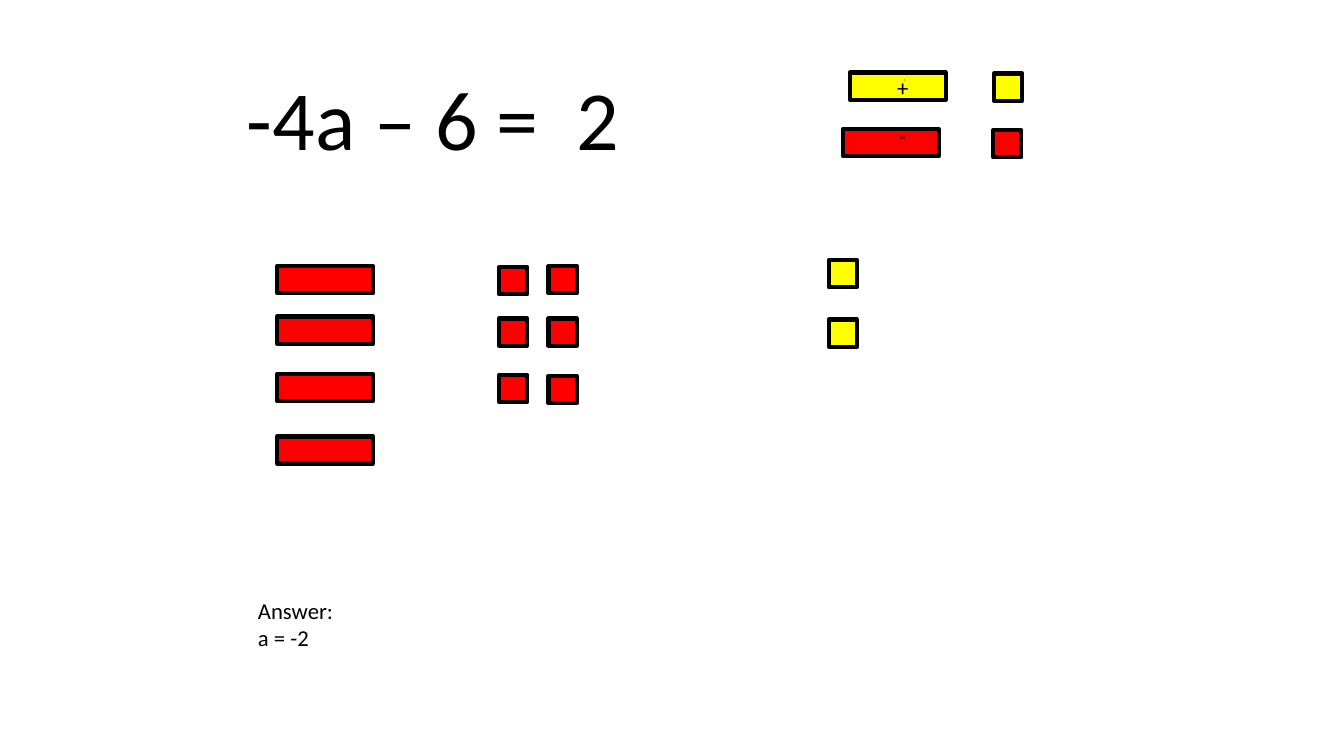
import pptx
import pptx.dml.color
import pptx.enum.shapes
import pptx.enum.text
import pptx.util

PX = 9144  # EMU per px, 100 px to the inch
BAR, UNIT = (95, 27), (28, 27)
RED, YELLOW, BLACK = "FF0000", "FFFF00", "000000"


def color(value):
    return pptx.dml.color.RGBColor.from_string(value)


def emu(*lengths):
    return [length * PX for length in lengths]


def add_tile(slide, left, top, size, fill):
    tile = slide.shapes.add_shape(
        pptx.enum.shapes.MSO_SHAPE.RECTANGLE, *emu(left, top, *size))
    tile.shadow.inherit = False
    tile.fill.solid()
    tile.fill.fore_color.rgb = color(fill)
    tile.line.color.rgb = color(BLACK)
    tile.line.width = pptx.util.Pt(3)


def add_text(slide, box, lines, size=16.2, font="Calibri", wrap=True,
             anchor=pptx.enum.text.MSO_ANCHOR.TOP, spacing=1.0):
    frame = slide.shapes.add_textbox(*emu(*box)).text_frame
    frame.word_wrap = wrap
    frame.vertical_anchor = anchor
    frame.text = "\n".join(lines)
    style = {"size": pptx.util.Pt(size), "name": font}
    for paragraph in frame.paragraphs:
        paragraph.line_spacing = spacing
        for run in paragraph.runs:
            for name, value in style.items():
                setattr(run.font, name, value)
            run.font.color.rgb = color(BLACK)


def add_key(slide, left, top):
    """Legend: the positive and negative variable bars and units."""
    tiny = {"size": 1.8, "font": "Times New Roman"}
    add_tile(slide, left, top + 56, BAR, RED)
    add_text(slide, (left + 46, top + 57, 28, 13), ["X"], **tiny)
    add_tile(slide, left + 7, top, BAR, YELLOW)
    add_text(slide, (left + 52, top + 1, 18, 13), ["X"], **tiny)
    add_tile(slide, left + 150, top + 1, UNIT, YELLOW)
    add_tile(slide, left + 149, top + 57, UNIT, RED)
    add_text(slide, (left + 39, top - 4, 46, 37), [" +"])
    add_text(slide, (left + 46, top + 44, 27, 37), ["-"], wrap=False)


def add_left_side(slide, left, top):
    """Four negative bars and six negative units."""
    for bar_top in (0, 50, 107, 169):
        add_tile(slide, left, top + bar_top, BAR, RED)
    for column, unit_tops in ((220, (1, 52, 108)), (269, (0, 52, 109))):
        for unit_top in unit_tops:
            add_tile(slide, left + column, top + unit_top, UNIT, RED)


def add_right_side(slide, left, top):
    """Two positive units."""
    for row in range(2):
        add_tile(slide, left, top + row * 59, UNIT, YELLOW)


def add_equation_slide(deck):
    slide = deck.slides.add_slide(deck.slide_layouts[6])
    add_text(slide, (235, 51, 862, 121), ["-4a – 6 =  2"], size=60,
             anchor=pptx.enum.text.MSO_ANCHOR.BOTTOM, spacing=0.9)
    add_key(slide, 836, 72)
    add_left_side(slide, 275, 264)
    add_right_side(slide, 822, 258)
    add_text(slide, (246, 587, 157, 65), ["Answer:", "a = -2"])


def main():
    deck = pptx.Presentation()
    deck.slide_width, deck.slide_height = emu(1333, 750)
    add_equation_slide(deck)
    deck.save("out.pptx")


if __name__ == "__main__":
    main()
